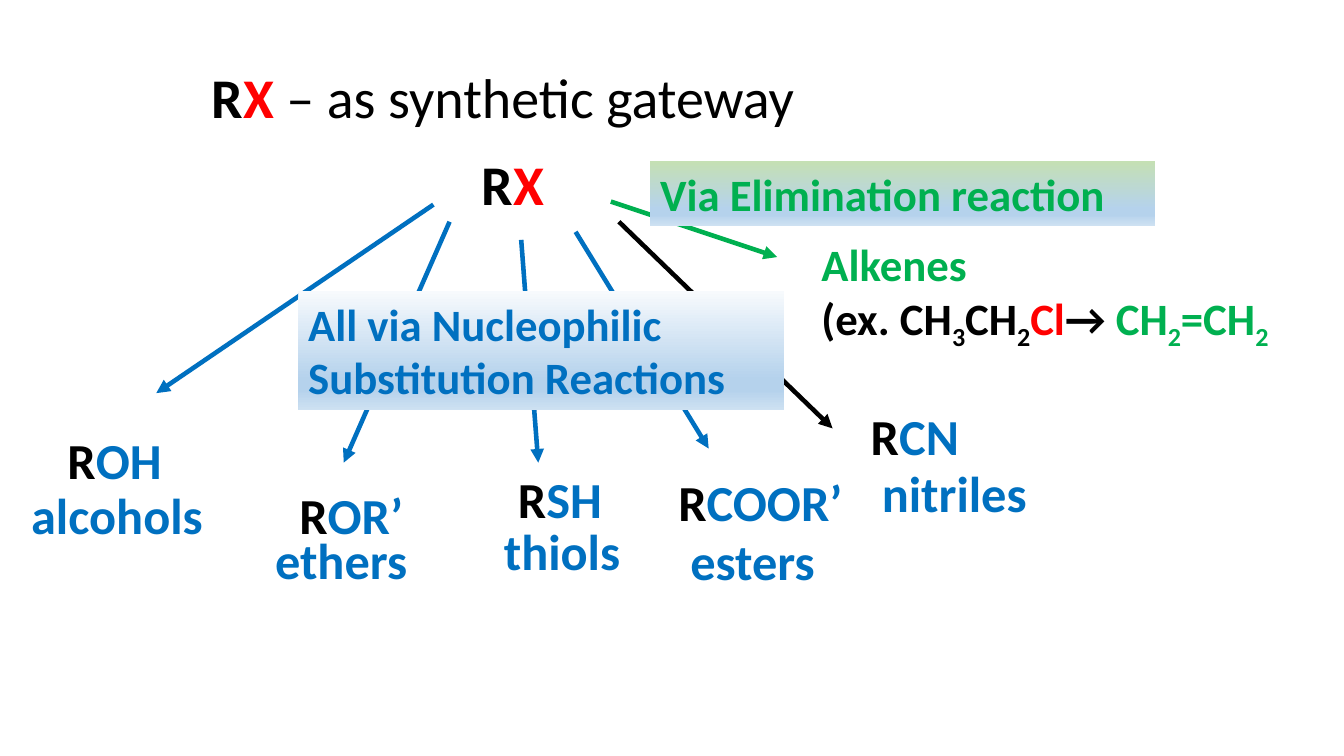
from lxml.etree import SubElement
from pptx import Presentation
from pptx.dml.color import RGBColor
from pptx.enum.shapes import MSO_CONNECTOR, MSO_SHAPE
from pptx.enum.text import MSO_ANCHOR, MSO_AUTO_SIZE, PP_ALIGN
from pptx.oxml.ns import qn
from pptx.util import Inches, Pt

WIDTH, HEIGHT = Inches(13.333), Inches(7.5)
BLACK = RGBColor(0x00, 0x00, 0x00)
RED = RGBColor(0xFF, 0x00, 0x00)
BLUE = RGBColor(0x00, 0x70, 0xC0)
GREEN = RGBColor(0x00, 0xB0, 0x50)
PALE_WHITE = RGBColor(0xF7, 0xFA, 0xFD)
PALE_GREEN = RGBColor(0xC5, 0xE0, 0xB4)
PALE_BLUE = RGBColor(0xB5, 0xD2, 0xEC)
SOFT_BLUE = RGBColor(0xCE, 0xE1, 0xF2)

FRAME_FORMAT = {
    "word_wrap": True,
    "auto_size": MSO_AUTO_SIZE.SHAPE_TO_FIT_TEXT,
    "vertical_anchor": MSO_ANCHOR.TOP,
}
FORMULA_SIZE = (14.78, 9.47)

PRODUCTS = [
    ("OH", (4.28, 56.13), "alcohols", (1.58, 63.33, 15.98)),
    ("OR’", (21.53, 63.33), "ethers", (19.73, 69.33, 18)),
    ("SH", (37.8, 61.2), "thiols", (36.75, 68.13, 14.55)),
    ("COOR’", (49.73, 61.6), "esters", (50.63, 69.47, 18)),
    ("CN", (64.05, 52.93), "nitriles", (64.88, 60.53, 23.18)),
]
ARROWS = [
    ((32.25, 27.07), (11.63, 52), BLUE),
    ((33.45, 29.33), (25.58, 61.2), BLUE),
    ((38.78, 31.73), (40.05, 61.2), BLUE),
    ((42.83, 30.67), (52.73, 59.33), BLUE),
    ((45.45, 26.67), (57.83, 34), GREEN),
    ((46.05, 29.33), (61.95, 56.67), BLACK),
]
ALKENES = [
    [("Alkenes", GREEN)],
    [
        ("(ex. CH", BLACK), ("3", BLACK, "sub"), ("CH", BLACK),
        ("2", BLACK, "sub"), ("Cl", RED), ("→ ", BLACK), ("CH", GREEN),
        ("2", GREEN, "sub"), ("=CH", GREEN), ("2", GREEN, "sub"),
    ],
]


def across(percent):
    return round(WIDTH * percent / 100)


def down(percent):
    return round(HEIGHT * percent / 100)


def place(left, top, width, height):
    return across(left), down(top), across(width), down(height)


def apply_format(target, values):
    for name, value in values.items():
        setattr(target, name, value)


def add_span(para, size, text, color, style="bold"):
    span = para.add_run()
    span.text = text
    apply_format(span.font, {
        "name": "Calibri", "size": Pt(size), "bold": style != "plain",
    })
    span.font.color.rgb = color
    if style == "sub":
        span._r.get_or_add_rPr().set("baseline", "-25000")


def write(box, lines, size):
    frame = box.text_frame
    apply_format(frame, FRAME_FORMAT)
    for index, line in enumerate(lines):
        para = frame.add_paragraph() if index else frame.paragraphs[0]
        para.alignment = PP_ALIGN.LEFT
        for piece in line:
            add_span(para, size, *piece)


def add_label(page, area, lines, size):
    write(page.shapes.add_textbox(*place(*area)), lines, size)


def add_banner(page, area, text, color, top_color):
    box = page.shapes.add_shape(MSO_SHAPE.RECTANGLE, *place(*area))
    box.shadow.inherit = False
    box.line.fill.background()
    box.fill.gradient()
    box.fill.gradient_angle = 270
    stops = box._element.spPr.find(".//" + qn("a:gsLst"))
    stops.clear()
    shades = [(0, top_color), (74, PALE_BLUE), (83, PALE_BLUE), (100, SOFT_BLUE)]
    for position, shade in shades:
        stop = SubElement(stops, qn("a:gs"), pos=str(position * 1000))
        SubElement(stop, qn("a:srgbClr"), val=str(shade))
    write(box, [[(text, color)]], 32)


def add_arrow(page, start, end, color):
    arrow = page.shapes.add_connector(
        MSO_CONNECTOR.STRAIGHT,
        across(start[0]), down(start[1]), across(end[0]), down(end[1]),
    )
    arrow.line.width = Pt(3.25)
    arrow.line.color.rgb = color
    SubElement(arrow.line._get_or_add_ln(), qn("a:tailEnd"), type="triangle")
    SubElement(arrow._element.spPr, qn("a:effectLst"))


def add_product(page, group, formula_corner, name, name_area):
    formula = [("R", BLACK), (group, BLUE)]
    add_label(page, (*formula_corner, *FORMULA_SIZE), [formula], 36)
    add_label(page, (*name_area, FORMULA_SIZE[1]), [[(name, BLUE)]], 36)


def main():
    deck = Presentation()
    apply_format(deck, {"slide_width": WIDTH, "slide_height": HEIGHT})
    page = deck.slides.add_slide(deck.slide_layouts[6])

    halide = [("R", BLACK), ("X", RED)]
    title = halide + [(" – as synthetic gateway", BLACK, "plain")]
    add_label(page, (15, 7.6, 62.25, 10.27), [title], 40)
    add_label(page, (35.1, 19.07, 15.53, 10.27), [halide], 40)
    for arrow in ARROWS:
        add_arrow(page, *arrow)
    add_label(page, (60.38, 30.67, 38.1, 15.73), ALKENES, 32)
    add_banner(page, (22.2, 38.53, 36.15, 15.73),
               "All via Nucleophilic Substitution Reactions", BLUE, PALE_WHITE)
    add_banner(page, (48.38, 21.33, 37.58, 8.53),
               "Via Elimination reaction", GREEN, PALE_GREEN)
    for product in PRODUCTS:
        add_product(page, *product)
    deck.save("out.pptx")


if __name__ == "__main__":
    main()
